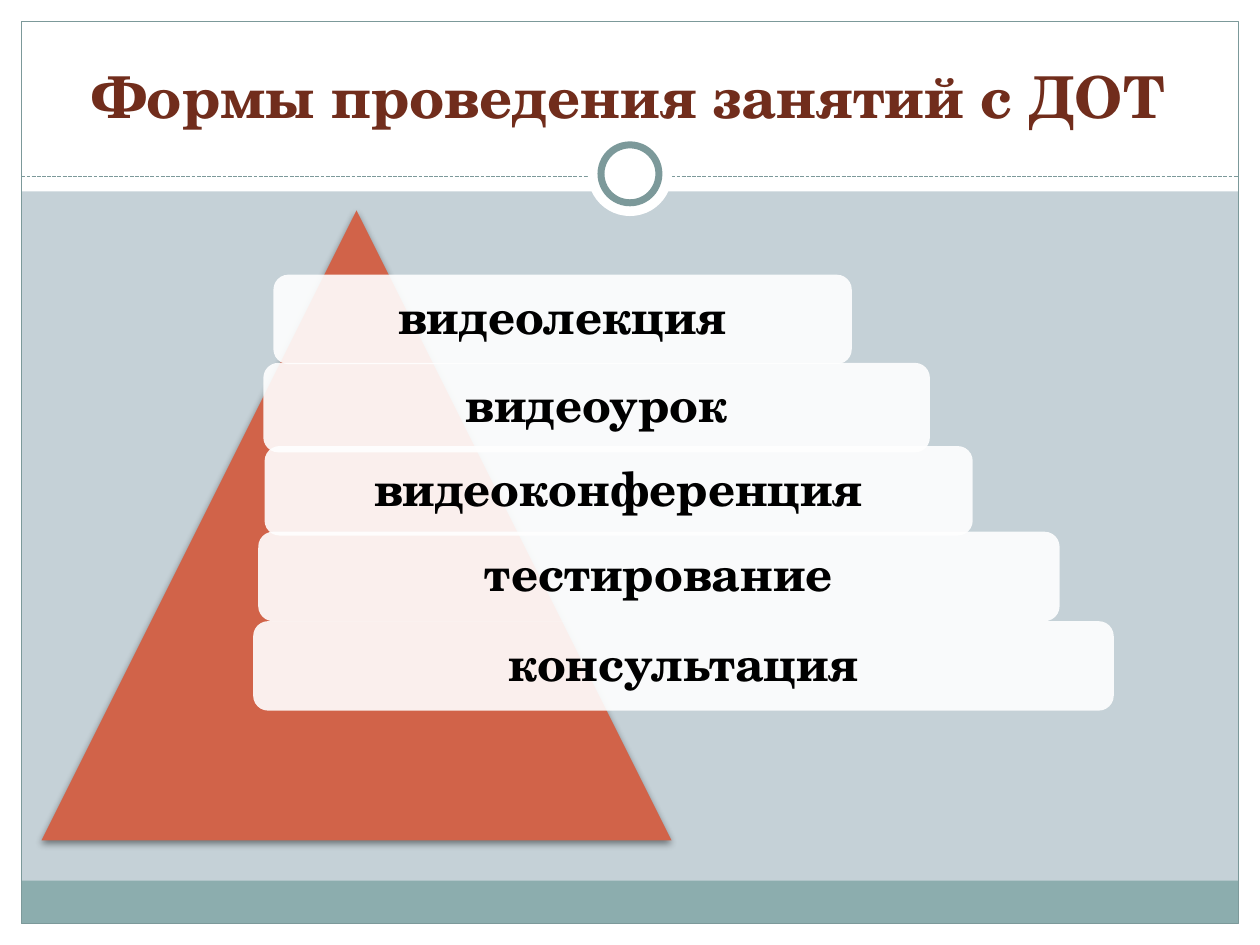
from pptx import Presentation
from pptx.dml.color import RGBColor
from pptx.enum.dml import MSO_LINE
from pptx.enum.shapes import MSO_CONNECTOR, MSO_SHAPE
from pptx.enum.text import MSO_ANCHOR, PP_ALIGN
from pptx.oxml.ns import qn
from pptx.util import Inches, Pt
from lxml.etree import SubElement

FONT = "TeX Gyre Schola"
WHITE = "FFFFFF"
TEAL = "7C999A"
FORMS = [
    ("видеолекция", 2.17, 2.18, 4.59),
    ("видеоурок", 2.09, 2.88, 5.29),
    ("видеоконференция", 2.1, 3.54, 5.62),
    ("тестирование", 2.05, 4.22, 6.36),
    ("консультация", 2.01, 4.93, 6.83),
]


def color(value):
    return RGBColor.from_string(value)


def add_box(slide, kind, box, fill=None, line=None, width=0.75):
    shape = slide.shapes.add_shape(kind, *map(Inches, box))
    shape.shadow.inherit = False
    if fill:
        shape.fill.solid()
        shape.fill.fore_color.rgb = color(fill)
    else:
        shape.fill.background()
    if line:
        shape.line.color.rgb = color(line)
        shape.line.width = Pt(width)
    else:
        shape.line.fill.background()
    return shape


def set_text(shape, text, size, value, anchor):
    frame = shape.text_frame
    frame.word_wrap = True
    frame.vertical_anchor = anchor
    paragraph = frame.paragraphs[0]
    paragraph.alignment = PP_ALIGN.CENTER
    run = paragraph.add_run()
    run.text = text
    run.font.name = FONT
    run.font.size = Pt(size)
    run.font.bold = True
    run.font.color.rgb = color(value)
    return frame


def add_transparency(shape, percent):
    fill_color = shape._element.spPr.find(qn("a:solidFill"))[0]
    SubElement(fill_color, qn("a:alpha"), val=str(percent * 1000))


def add_drop_shadow(shape):
    effects = shape._element.spPr.find(qn("a:effectLst"))
    shadow = SubElement(effects, qn("a:outerShdw"), blurRad=str(Pt(4)),
                        dist=str(Pt(2)), dir="5400000", rotWithShape="0")
    shadow_color = SubElement(shadow, qn("a:srgbClr"), val="000000")
    SubElement(shadow_color, qn("a:alpha"), val="45000")


def add_frame(slide, left, top, width, height):
    right, bottom = left + width, top + height
    margin = 0.17
    for box in [
        (left, bottom - margin, width, margin),
        (left, top, width, 1.52),
        (left, top, margin, height),
        (right - margin, top, margin, height),
    ]:
        add_box(slide, MSO_SHAPE.RECTANGLE, box, WHITE)
    inner_width = width - 2 * margin
    add_box(slide, MSO_SHAPE.RECTANGLE,
            (left + margin, bottom - margin - 0.34, inner_width, 0.34), "8CADAE")
    add_box(slide, MSO_SHAPE.RECTANGLE,
            (left + margin, top + margin, inner_width, height - 2 * margin), line=TEAL)


def add_divider(slide, left, top, width):
    line = slide.shapes.add_connector(
        MSO_CONNECTOR.STRAIGHT, Inches(left), Inches(top), Inches(left + width), Inches(top))
    line.line.color.rgb = color(TEAL)
    line.line.width = Pt(0.75)
    line.line.dash_style = MSO_LINE.SQUARE_DOT
    SubElement(line._element.spPr, qn("a:effectLst"))
    center_x, center_y = left + width / 2, top - 0.02
    for size, outline in [(0.67, None), (0.46, TEAL)]:
        box = (center_x - size / 2, center_y - size / 2, size, size)
        add_box(slide, MSO_SHAPE.OVAL, box, WHITE, outline, 4)


def add_title(slide, left, top, width, height):
    title = slide.shapes.add_textbox(*map(Inches, (left, top, width, height)))
    set_text(title, "Формы проведения занятий с ДОТ", 33, "712D1C", MSO_ANCHOR.BOTTOM)


def add_pyramid(slide, left, top, width, height):
    triangle = add_box(slide, MSO_SHAPE.ISOSCELES_TRIANGLE, (left, top, width, height), "D16349")
    add_drop_shadow(triangle)
    for text, bar_left, bar_top, bar_width in FORMS:
        bar = add_box(slide, MSO_SHAPE.ROUNDED_RECTANGLE,
                      (bar_left, bar_top, bar_width, 0.71), WHITE)
        add_transparency(bar, 90)
        frame = set_text(bar, text, 27, "000000", MSO_ANCHOR.MIDDLE)
        frame.margin_left = frame.margin_right = Inches(0.11)
        frame.margin_top = frame.margin_bottom = Inches(0.11)
        frame.paragraphs[0].line_spacing = 0.9


def main():
    presentation = Presentation()
    presentation.slide_width = Inches(10)
    presentation.slide_height = Inches(7.5)
    slide = presentation.slides.add_slide(presentation.slide_layouts[6])
    slide.background.fill.solid()
    slide.background.fill.fore_color.rgb = color("C5D1D7")
    add_frame(slide, 0, 0, 10, 7.5)
    add_divider(slide, 0.17, 1.4, 9.66)
    add_title(slide, 0.33, 0.25, 9.33, 0.83)
    add_pyramid(slide, 0.33, 1.67, 5, 5)
    presentation.save("out.pptx")


if __name__ == "__main__":
    main()
